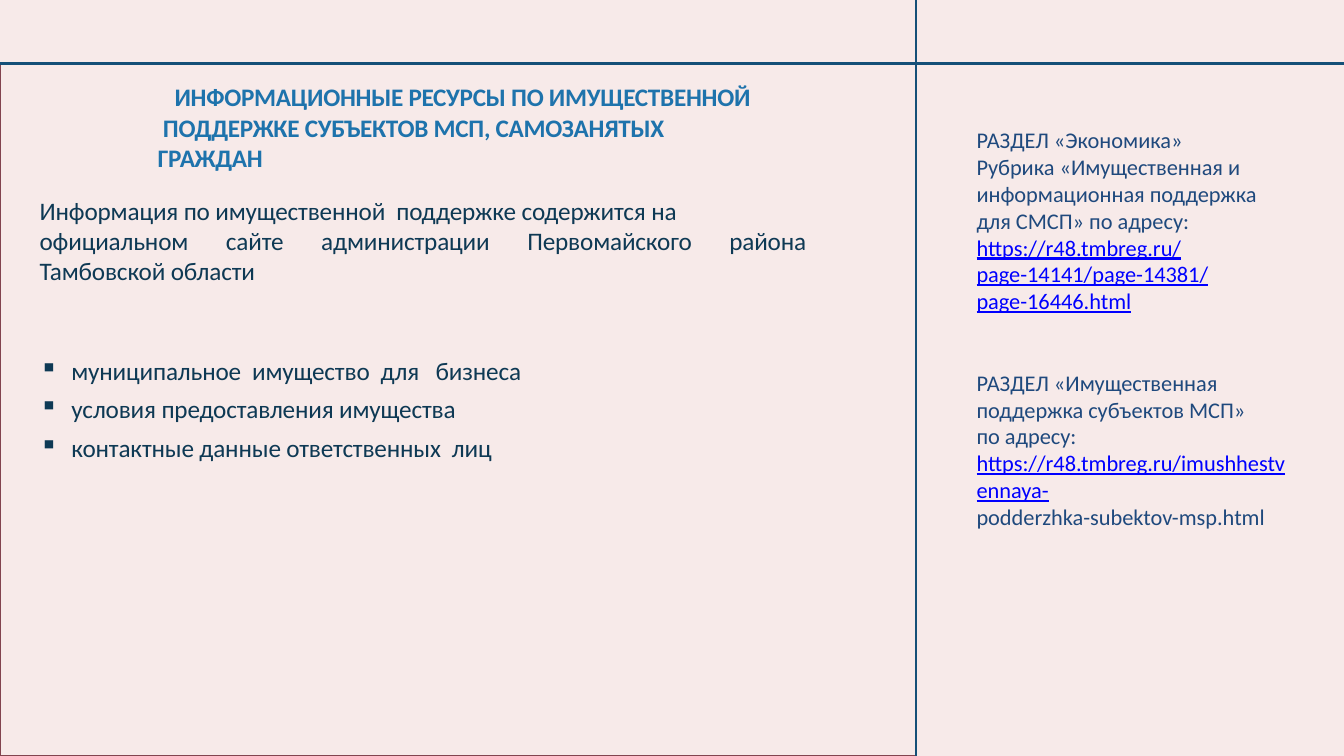
import dataclasses

import lxml.etree
import pptx
import pptx.dml.color
import pptx.enum.shapes
import pptx.enum.text
import pptx.oxml.ns
import pptx.util

Cm = pptx.util.Cm
Pt = pptx.util.Pt
Align = pptx.enum.text.PP_ALIGN


@dataclasses.dataclass(frozen=True)
class Theme:
    font: str = "Calibri"
    background: str = "F7EAE9"
    border: str = "82444F"
    rule: str = "155078"
    heading: str = "1E73AC"
    body: str = "0E3954"
    aside: str = "1F497D"
    link: str = "0000FF"
    main_size: int = 18
    aside_size: int = 16


theme = Theme()


def rgb(value):
    return pptx.dml.color.RGBColor.from_string(value)


def write(frame, text, color, size=theme.main_size, bold=False, underline=False, tracking=0,
          before=0, align=Align.LEFT, margin=0, indent=0, bullet=None, same_line=False):
    paragraph = frame.paragraphs[-1]
    if not same_line:
        if paragraph.runs:
            paragraph = frame.add_paragraph()
        paragraph.alignment = align
        paragraph.space_before = Pt(before)
        properties = paragraph._p.get_or_add_pPr()
        properties.set("marL", str(Cm(margin)))
        properties.set("indent", str(Cm(indent)))
        if bullet:
            mark = lxml.etree.SubElement(properties, pptx.oxml.ns.qn("a:buChar"))
            mark.set("char", bullet)
    run = paragraph.add_run()
    run.text = text
    run.font.name = theme.font
    run.font.size = Pt(size)
    run.font.bold = bold
    run.font.underline = underline
    run.font.color.rgb = rgb(color)
    run._r.get_or_add_rPr().set("spc", str(round(tracking * 100)))


deck = pptx.Presentation()
deck.slide_width = Cm(33.87)
deck.slide_height = Cm(19.05)
slide = deck.slides.add_slide(deck.slide_layouts[5])
slide.background.fill.solid()
slide.background.fill.fore_color.rgb = rgb(theme.background)

rule_y, divider_x = Cm(1.6), Cm(23.09)

main_panel = slide.shapes.add_shape(
    pptx.enum.shapes.MSO_SHAPE.RECTANGLE, 0, rule_y, divider_x, deck.slide_height - rule_y)
main_panel.shadow.inherit = False
main_panel.fill.background()
main_panel.line.color.rgb = rgb(theme.border)
main_panel.line.width = Pt(0.96)

for x1, y1, x2, y2, weight in (
    (0, rule_y, deck.slide_width, rule_y, 1.8),
    (divider_x, 0, divider_x, deck.slide_height, 1.56),
):
    divider = slide.shapes.add_connector(
        pptx.enum.shapes.MSO_CONNECTOR.STRAIGHT, x1, y1, x2, y2)
    divider.line.color.rgb = rgb(theme.rule)
    divider.line.width = Pt(weight)
    lxml.etree.SubElement(divider._element.spPr, pptx.oxml.ns.qn("a:effectLst"))

heading = slide.shapes.title
sources = slide.shapes.add_textbox(0, 0, 0, 0)
intro = slide.shapes.add_textbox(0, 0, 0, 0)
topics = slide.shapes.add_textbox(0, 0, 0, 0)

for block, left, top, width, height in (
    (heading, 3.94, 2.03, 15.04, 2.3),
    (sources, 24.61, 3.15, 7.8, 10.97),
    (intro, 0.97, 4.88, 19.35, 2.34),
    (topics, 0.97, 8.92, 14.27, 2.77),
):
    block.left, block.top, block.width, block.height = Cm(left), Cm(top), Cm(width), Cm(height)
    frame = block.text_frame
    frame.word_wrap = True
    frame.auto_size = pptx.enum.text.MSO_AUTO_SIZE.NONE
    frame.vertical_anchor = pptx.enum.text.MSO_ANCHOR.TOP
    frame.margin_left = frame.margin_right = frame.margin_bottom = 0
    frame.margin_top = Cm(0.03)

write(heading.text_frame,
      "ИНФОРМАЦИОННЫЕ РЕСУРСЫ ПО ИМУЩЕСТВЕННОЙ  ПОДДЕРЖКЕ СУБЪЕКТОВ МСП, САМОЗАНЯТЫХ ГРАЖДАН",
      theme.heading, bold=True, tracking=-0.2, before=1, margin=0.03, indent=0.43)

for text, color, before, same_line in (
    ("РАЗДЕЛ «Экономика»", theme.aside, 0, False),
    ("Рубрика «Имущественная и", theme.aside, 0, False),
    ("информационная поддержка для СМСП» по адресу:", theme.aside, 0, False),
    ("https://r48.tmbreg.ru/page-14141/page-14381/page-16446.html", theme.link, 0, False),
    ("РАЗДЕЛ «Имущественная поддержка субъектов МСП»", theme.aside, 39, False),
    ("по адресу: ", theme.aside, 0, False),
    ("https://r48.tmbreg.ru/imushhestvennaya-", theme.link, 0, True),
    ("podderzhka-subektov-msp.html", theme.aside, 0, False),
):
    write(sources.text_frame, text, color, size=theme.aside_size,
          underline=color == theme.link, before=before, same_line=same_line)

write(intro.text_frame, "Информация по имущественной  поддержке содержится на",
      theme.body, tracking=-0.1, before=1, margin=0.03)
write(intro.text_frame,
      "официальном сайте администрации Первомайского района Тамбовской области",
      theme.body, tracking=-0.1, margin=0.03, align=Align.JUSTIFY)

for text, before in (
    ("муниципальное  имущество  для   бизнеса", 1),
    ("условия предоставления имущества", 6),
    ("контактные данные ответственных  лиц", 6),
):
    write(topics.text_frame, text, theme.body, tracking=-0.1, before=before,
          margin=0.83, indent=-0.8, bullet="▪")

deck.save("out.pptx")
